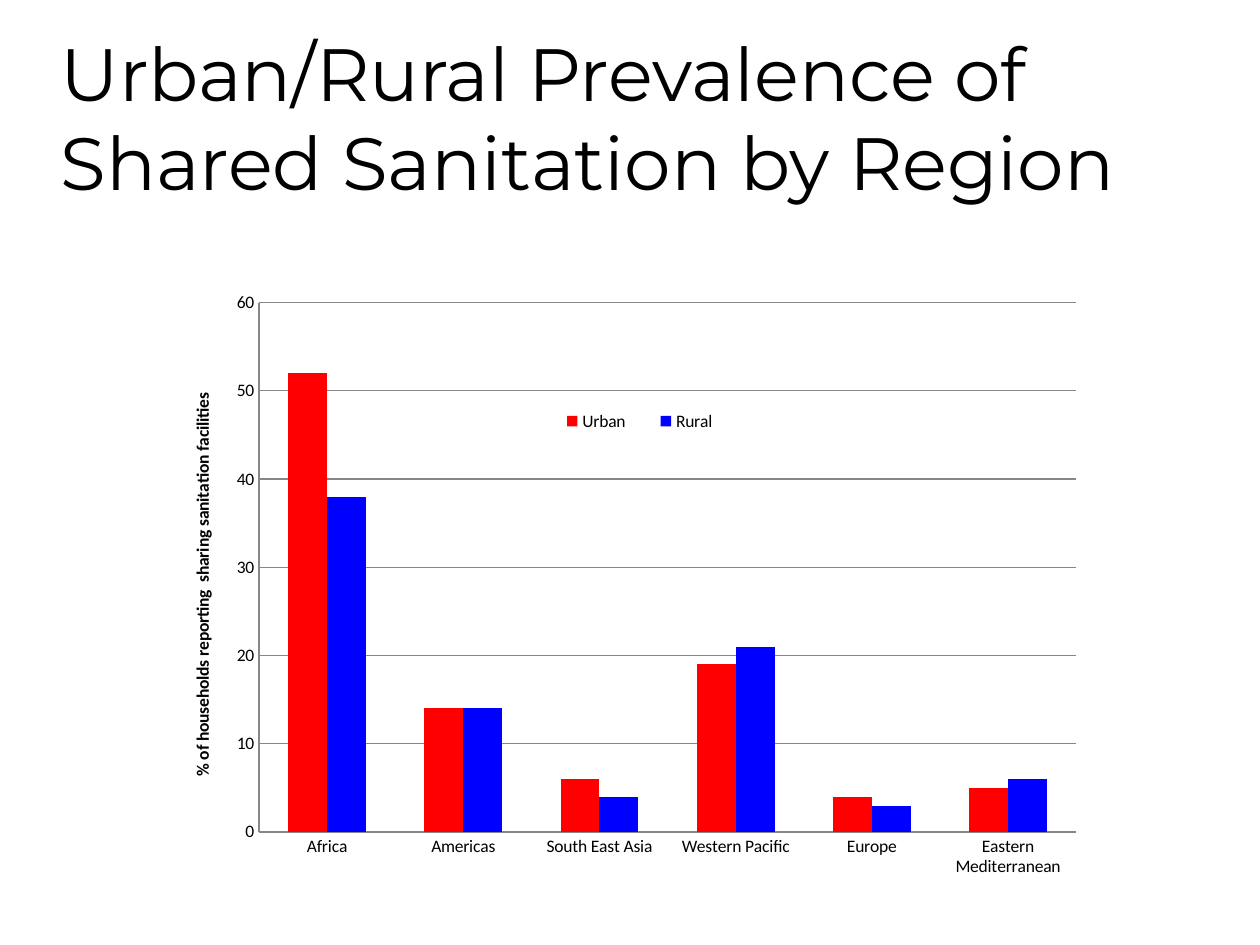
from dataclasses import dataclass

from lxml import etree
from pptx import Presentation
from pptx.chart.data import CategoryChartData
from pptx.dml.color import RGBColor
from pptx.enum import chart as charts, text as texts
from pptx.oxml import ns
from pptx.util import Pt

BLACK, GREY = "000000", "878787"


@dataclass
class Series:
    name: str
    values: tuple[int, ...]
    color: str


REGIONS = ("Africa", "Americas", "South East Asia", "Western Pacific",
           "Europe", "Eastern Mediterranean")
SERIES = (
    Series("Urban", (52, 14, 6, 19, 4, 5), "FF0000"),
    Series("Rural", (38, 14, 4, 21, 3, 6), "0000FF"),
)


def color(value: str) -> RGBColor:
    return RGBColor.from_string(value)


def format_font(font, name="Calibri", size=10.0, bold=False, fill=BLACK) -> None:
    font.name, font.size, font.bold = name, Pt(size), bold
    font.color.rgb = color(fill)


def write_text(frame, content: str, **font_format) -> None:
    """Put one formatted run in a text frame."""
    paragraph = frame.paragraphs[0]
    run = paragraph.add_run()
    run.text = content
    format_font(run.font, **font_format)


def place(element, x: float, y: float, width: float, height: float, inner=False) -> None:
    """Give a plot area or legend a fixed place, in fractions of the chart."""
    for old in element.findall(ns.qn("c:layout")):
        element.remove(old)
    layout = etree.Element(ns.qn("c:layout"))
    manual = etree.SubElement(layout, ns.qn("c:manualLayout"))
    settings = [("layoutTarget", "inner")] if inner else []
    settings += [("xMode", "edge"), ("yMode", "edge"),
                 ("x", x), ("y", y), ("w", width), ("h", height)]
    for tag, value in settings:
        etree.SubElement(manual, ns.qn(f"c:{tag}")).set("val", str(value))
    before = element.find(ns.qn("c:legendPos"))
    element.insert(0 if before is None else element.index(before) + 1, layout)


def add_title(slide) -> None:
    title = slide.shapes.title
    title.left, title.top, title.width, title.height = Pt(27.4), Pt(21.6), Pt(669), Pt(90)
    frame = title.text_frame
    frame.word_wrap = True
    frame.auto_size = texts.MSO_AUTO_SIZE.NONE
    frame.vertical_anchor = texts.MSO_ANCHOR.MIDDLE
    frame.paragraphs[0].alignment = texts.PP_ALIGN.LEFT
    write_text(frame, "Urban/Rural Prevalence of Shared Sanitation by Region",
               name="Montserrat", size=42.3)


def add_sanitation_chart(slide) -> None:
    data = CategoryChartData()
    data.categories = REGIONS
    for series in SERIES:
        data.add_series(series.name, series.values)
    chart = slide.shapes.add_chart(
        charts.XL_CHART_TYPE.COLUMN_CLUSTERED,
        Pt(95), Pt(159), Pt(530.6), Pt(347.8), data).chart
    chart.has_title = False
    format_font(chart.font)

    # Columns
    plot = chart.plots[0]
    plot.gap_width, plot.overlap, plot.vary_by_categories = 150, 0, False
    for drawn, series in zip(plot.series, SERIES):
        drawn.format.fill.solid()
        drawn.format.fill.fore_color.rgb = color(series.color)
        drawn.invert_if_negative = False

    # Axes and gridlines
    value_axis = chart.value_axis
    value_axis.minimum_scale, value_axis.maximum_scale = 0, 60
    value_axis.major_unit = 10
    value_axis.has_major_gridlines = True
    for axis in (chart.category_axis, value_axis):
        axis.major_tick_mark = axis.minor_tick_mark = charts.XL_TICK_MARK.NONE
    for line in (chart.category_axis.format.line, value_axis.format.line,
                 value_axis.major_gridlines.format.line):
        line.color.rgb = color(GREY)
        line.width = Pt(0.75)
    write_text(value_axis.axis_title.text_frame,
               "% of households reporting  sharing sanitation facilities", bold=True)

    # Legend over the plot
    chart.has_legend = True
    legend = chart.legend
    legend.position = charts.XL_LEGEND_POSITION.RIGHT
    legend.include_in_layout = False
    format_font(legend.font)
    place(legend._element, 0.4, 0.21, 0.22, 0.05)
    legend.include_in_layout = True
    place(chart._chartSpace.chart.plotArea, 0.1, 0.04, 0.88, 0.87, inner=True)


def main() -> None:
    presentation = Presentation()
    presentation.slide_width, presentation.slide_height = Pt(720), Pt(540)
    slide = presentation.slides.add_slide(presentation.slide_layouts[5])
    add_title(slide)
    add_sanitation_chart(slide)
    presentation.save("out.pptx")


if __name__ == "__main__":
    main()
